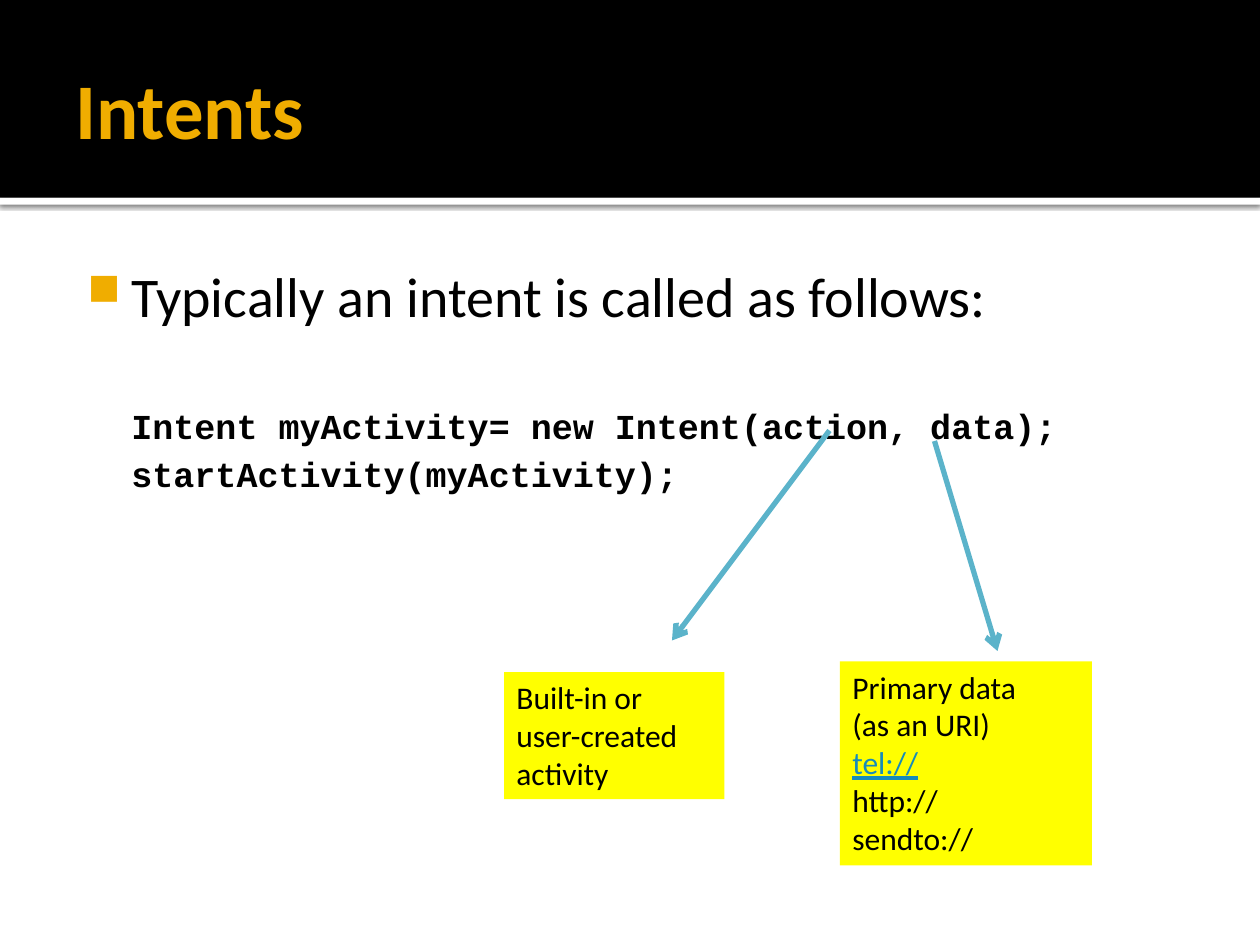
from lxml import etree
from pptx import Presentation
from pptx.dml.color import RGBColor
from pptx.enum.shapes import MSO_CONNECTOR, MSO_SHAPE
from pptx.enum.text import MSO_ANCHOR, PP_ALIGN
from pptx.oxml import parse_xml
from pptx.oxml.ns import nsdecls, qn
from pptx.util import Pt

RECTANGLE = MSO_SHAPE.RECTANGLE
STRAIGHT = MSO_CONNECTOR.STRAIGHT
MIDDLE = MSO_ANCHOR.MIDDLE
TOP = MSO_ANCHOR.TOP
LEFT = PP_ALIGN.LEFT

BLACK, WHITE, AMBER = "000000", "FFFFFF", "F0AD00"
YELLOW, LINK_BLUE, ARROW_BLUE = "FFFF00", "168BBA", "5BB3CA"


def color(value):
    """Turn a hex string into a colour."""
    return RGBColor.from_string(value)


def add_block(slide, box, fill):
    """Draw a plain filled rectangle."""
    block = slide.shapes.add_shape(RECTANGLE, *map(Pt, box))
    block.shadow.inherit = False
    block.fill.solid()
    block.fill.fore_color.rgb = color(fill)
    block.line.fill.background()
    return block


def format_paragraph(paragraph, size, font="Calibri", bold=False, ink=BLACK):
    """Align a paragraph left and set the font of its runs."""
    paragraph.alignment = LEFT
    for run in paragraph.runs:
        run.font.name = font
        run.font.size = Pt(size)
        run.font.bold = bold
        run.font.color.rgb = color(ink)


def set_frame(frame, insets, anchor=TOP):
    """Wrap a text frame and set its insets and anchor."""
    frame.word_wrap = True
    frame.vertical_anchor = anchor
    (frame.margin_left, frame.margin_top,
     frame.margin_right, frame.margin_bottom) = map(Pt, insets)


def add_header(slide, box, title):
    """Draw the dark title band with the shadowed strip below it."""
    left, top, width, height = box
    strip = add_block(slide, (left, top + height, width, 4), WHITE)
    effects = strip._element.spPr.find(qn("a:effectLst"))
    effects.append(parse_xml(
        f'<a:outerShdw {nsdecls("a")} blurRad="{Pt(2.5)}" dist="{Pt(0.8)}" '
        'dir="5400000" algn="tl" rotWithShape="0"><a:srgbClr val="000000">'
        '<a:alpha val="60000"/></a:srgbClr></a:outerShdw>'))
    add_block(slide, box, BLACK)
    heading = slide.shapes.add_textbox(
        Pt(left + 36), Pt(top + 12), Pt(width - 72), Pt(height - 14))
    set_frame(heading.text_frame, (7.2, 3.6, 3.6, 3.6), MIDDLE)
    heading.text_frame.text = title
    format_paragraph(heading.text_frame.paragraphs[0], 45, bold=True, ink=AMBER)


def add_body(slide, box, statement, code_lines):
    """Write the bulleted statement and the code below it."""
    frame = slide.shapes.add_textbox(*map(Pt, box)).text_frame
    set_frame(frame, (4.3, 9.8, 7.2, 3.6))
    frame.text = "\n".join([statement, *code_lines])
    bullet, *code = frame.paragraphs
    format_paragraph(bullet, 32)
    for paragraph in frame.paragraphs:
        paragraph._p.get_or_add_pPr().set("marL", str(Pt(34.8)))
    properties = bullet._p.pPr
    properties.set("indent", str(Pt(-25.2)))
    bullet_color = etree.SubElement(properties, qn("a:buClr"))
    etree.SubElement(bullet_color, qn("a:srgbClr"), val=AMBER)
    etree.SubElement(properties, qn("a:buSzPct"), val="80000")
    etree.SubElement(properties, qn("a:buChar"), char="■")
    for paragraph, gap in zip(code, (43.4, 3)):
        format_paragraph(paragraph, 20, "Courier New", bold=True)
        paragraph.space_before = Pt(gap)


def add_note(slide, box, lines, link=None):
    """Draw a yellow note, showing one line in link style."""
    frame = add_block(slide, box, YELLOW).text_frame
    set_frame(frame, (7.2, 3.6, 7.2, 3.6))
    frame.text = "\n".join(lines)
    for paragraph in frame.paragraphs:
        is_link = paragraph.text == link
        format_paragraph(paragraph, 18, ink=LINK_BLUE if is_link else BLACK)
        paragraph.runs[0].font.underline = is_link


def add_arrow(slide, start, end):
    """Draw an arrow from a code argument towards its note."""
    arrow = slide.shapes.add_connector(STRAIGHT, *map(Pt, start + end))
    arrow.line.color.rgb = color(ARROW_BLUE)
    arrow.line.width = Pt(3)
    etree.SubElement(arrow.line._get_or_add_ln(), qn("a:tailEnd"), type="arrow")
    etree.SubElement(arrow._element.spPr, qn("a:effectLst"))


def main():
    """Build the slide and save it."""
    deck = Presentation()
    deck.slide_width, deck.slide_height = Pt(720), Pt(540)
    slide = deck.slides.add_slide(deck.slide_layouts[6])
    add_header(slide, (0, 0, 720, 113), "Intents")
    add_body(slide, (36, 139.7, 648, 364.3),
             "Typically an intent is called as follows:",
             ["Intent myActivity= new Intent(action, data);",
              "startActivity(myActivity);"])
    add_note(slide, (288, 384, 126, 72.7), ["Built-in or user-created activity"])
    add_note(slide, (480, 378, 144, 116.5),
             ["Primary data", "(as an URI)", "tel://", "http://", "sendto://"],
             link="tel://")
    add_arrow(slide, (474, 246), (384, 366))
    add_arrow(slide, (534, 252), (570, 372))
    deck.save("out.pptx")


if __name__ == "__main__":
    main()
